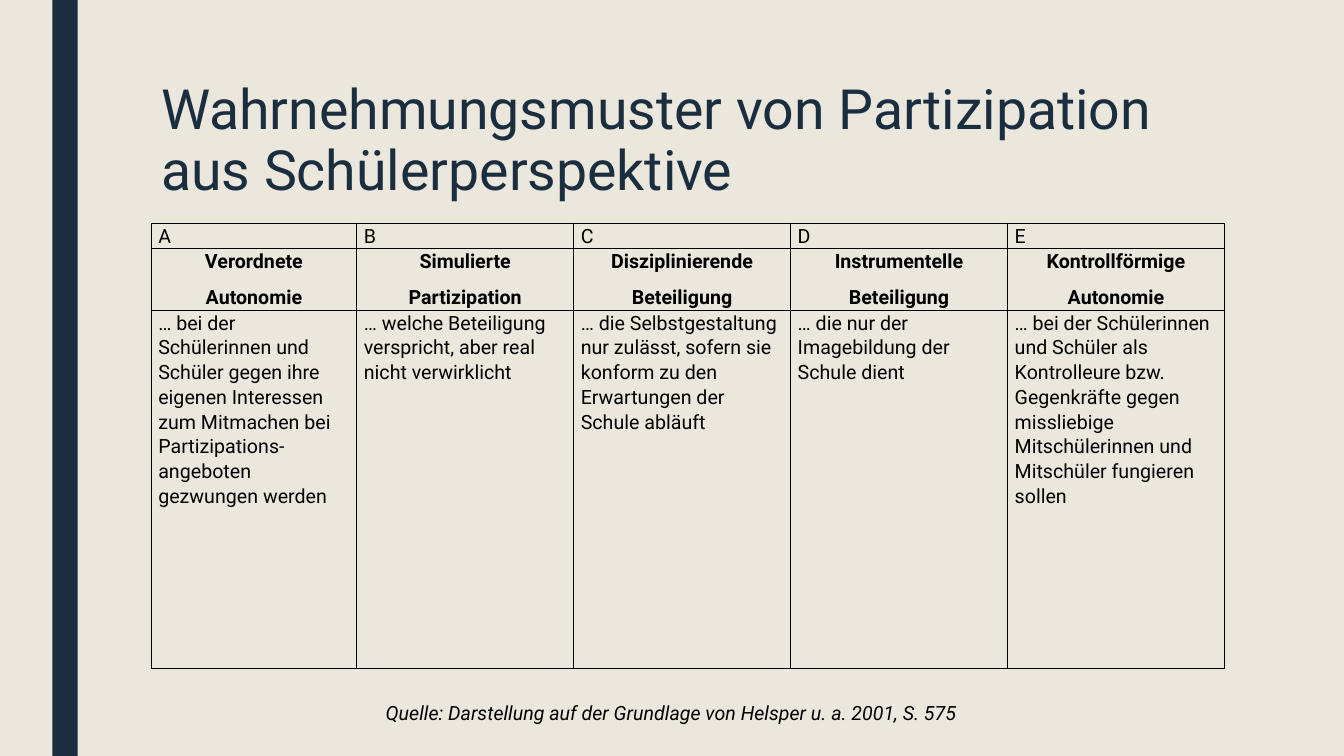
from dataclasses import dataclass

from lxml.etree import SubElement
from pptx import Presentation
from pptx.dml.color import RGBColor
from pptx.enum.shapes import MSO_SHAPE
from pptx.enum.text import MSO_ANCHOR, PP_ALIGN
from pptx.oxml.ns import qn
from pptx.util import Cm, Pt


@dataclass(frozen=True)
class Theme:
    background: RGBColor = RGBColor(0xEB, 0xE7, 0xDD)
    navy: RGBColor = RGBColor(0x1A, 0x2E, 0x40)
    black: RGBColor = RGBColor(0, 0, 0)
    font: str = "Roboto"
    title_size: float = 39.6
    body_size: float = 14
    border_width: float = 1


THEME = Theme()

TITLE = "Wahrnehmungsmuster von Partizipation aus Schülerperspektive"
SOURCE_NOTE = "Quelle: Darstellung auf der Grundlage von Helsper u. a. 2001, S. 575"

# Each pattern: letter, name in two lines, description
PATTERNS = [
    ("A", "Verordnete\nAutonomie",
     "… bei der Schülerinnen und Schüler gegen ihre eigenen Interessen zum "
     "Mitmachen bei Partizipations-angeboten gezwungen werden"),
    ("B", "Simulierte\nPartizipation",
     "… welche Beteiligung verspricht, aber real nicht verwirklicht"),
    ("C", "Disziplinierende\nBeteiligung",
     "… die Selbstgestaltung nur zulässt, sofern sie konform zu den "
     "Erwartungen der Schule abläuft"),
    ("D", "Instrumentelle\nBeteiligung",
     "… die nur der Imagebildung der Schule dient"),
    ("E", "Kontrollförmige\nAutonomie",
     "… bei der Schülerinnen und Schüler als Kontrolleure bzw. Gegenkräfte "
     "gegen missliebige Mitschülerinnen und Mitschüler fungieren sollen"),
]
ROW_HEIGHTS = [0.58, 1.52, 9.02]
FIRST_COLUMN_WIDTH = 5.18

BODY_FONT = {"name": THEME.font, "size": Pt(THEME.body_size), "bold": False}
ROW_FONTS = [BODY_FONT, BODY_FONT | {"bold": True}, BODY_FONT]
ROW_ALIGNMENTS = [PP_ALIGN.LEFT, PP_ALIGN.CENTER, PP_ALIGN.LEFT]
CELL_MARGINS = {"margin_left": Cm(0.18), "margin_right": Cm(0.18),
                "margin_top": 0, "margin_bottom": 0}


def apply_format(target, values):
    for attribute, value in values.items():
        setattr(target, attribute, value)


def write_text(frame, text, font, color, paragraph_format):
    frame.text = text
    for paragraph in frame.paragraphs:
        apply_format(paragraph, paragraph_format)
        for run in paragraph.runs:
            apply_format(run.font, font)
            run.font.color.rgb = color


def add_side_band(slide, left, top, width, height):
    band = slide.shapes.add_shape(
        MSO_SHAPE.RECTANGLE, Cm(left), Cm(top), Cm(width), Cm(height))
    band.shadow.inherit = False
    band.fill.solid()
    band.fill.fore_color.rgb = THEME.navy
    band.line.fill.background()


def add_text(slide, box, text, font, color, anchor, paragraph_format):
    frame = slide.shapes.add_textbox(*map(Cm, box)).text_frame
    apply_format(frame, {"word_wrap": True, "vertical_anchor": anchor})
    write_text(frame, text, font, color, paragraph_format)


def add_borders(cell):
    properties = cell._tc.get_or_add_tcPr()
    for side in ("lnL", "lnR", "lnT", "lnB"):
        line = SubElement(properties, qn(f"a:{side}"), w=str(Pt(THEME.border_width)))
        fill = SubElement(line, qn("a:solidFill"))
        SubElement(fill, qn("a:srgbClr"), val=str(THEME.black))


def add_pattern_table(slide, left, top, width):
    table = slide.shapes.add_table(
        len(ROW_HEIGHTS), len(PATTERNS), Cm(left), Cm(top),
        Cm(width), Cm(sum(ROW_HEIGHTS))).table
    apply_format(table, {"first_row": False, "horz_banding": False})

    # The first column is slightly narrower, the others share the rest
    other_width = (width - FIRST_COLUMN_WIDTH) / (len(PATTERNS) - 1)
    for index, column in enumerate(table.columns):
        column.width = Cm(other_width if index else FIRST_COLUMN_WIDTH)
    for row, height in zip(table.rows, ROW_HEIGHTS):
        row.height = Cm(height)

    for column_index, pattern in enumerate(PATTERNS):
        for row_index, text in enumerate(pattern):
            cell = table.cell(row_index, column_index)
            apply_format(cell, CELL_MARGINS)
            add_borders(cell)
            cell.fill.background()
            write_text(cell.text_frame, text, ROW_FONTS[row_index], THEME.black,
                       {"alignment": ROW_ALIGNMENTS[row_index],
                        "line_spacing": 1.07, "space_after": Pt(8)})


def main():
    presentation = Presentation()
    apply_format(presentation, {"slide_width": Cm(33.87), "slide_height": Cm(19.05)})
    slide = presentation.slides.add_slide(presentation.slide_layouts[6])
    slide.background.fill.solid()
    slide.background.fill.fore_color.rgb = THEME.background

    add_side_band(slide, 1.32, 0, 0.64, 19.05)
    # Title
    add_text(slide, (3.81, 1.9, 27.05, 2.97), TITLE,
             {"name": THEME.font, "size": Pt(THEME.title_size)}, THEME.navy,
             MSO_ANCHOR.TOP, {"line_spacing": 0.92})
    add_pattern_table(slide, 3.81, 5.63, 27.05)
    # Source note
    add_text(slide, (9.47, 17.53, 15.7, 0.86), SOURCE_NOTE,
             BODY_FONT | {"italic": True}, THEME.black, MSO_ANCHOR.MIDDLE, {})

    presentation.save("out.pptx")


if __name__ == "__main__":
    main()
